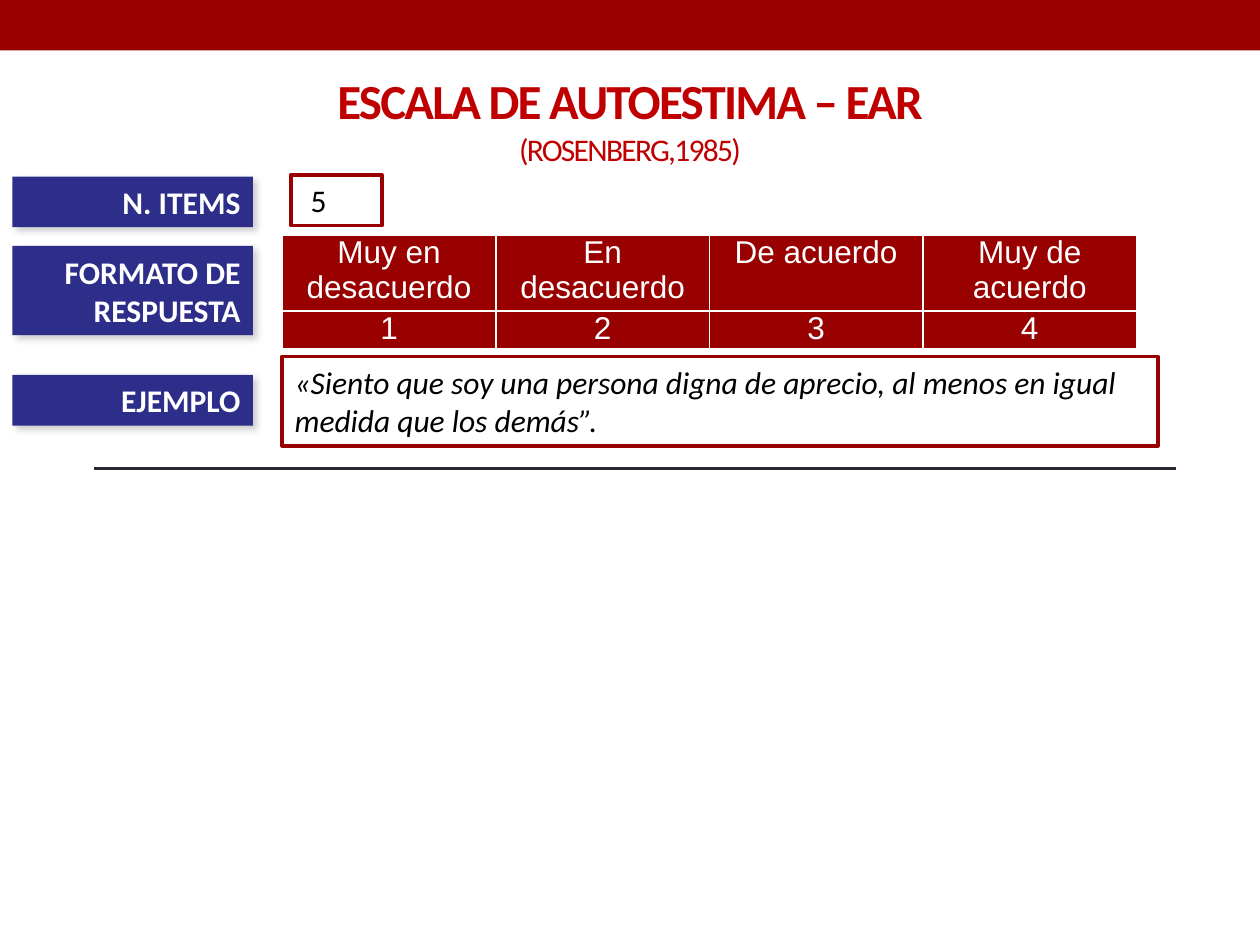
from dataclasses import dataclass

from lxml.etree import SubElement
from pptx import Presentation
from pptx.dml.color import RGBColor
from pptx.enum.shapes import MSO_CONNECTOR, MSO_SHAPE
from pptx.enum.text import MSO_ANCHOR, PP_ALIGN
from pptx.oxml.ns import qn
from pptx.util import Cm, Pt


@dataclass(frozen=True)
class Theme:
    red: RGBColor = RGBColor(0x99, 0x00, 0x00)
    title: RGBColor = RGBColor(0xC0, 0x00, 0x00)
    blue: RGBColor = RGBColor(0x2D, 0x2D, 0x8A)
    rule: RGBColor = RGBColor(0x25, 0x27, 0x31)
    white: RGBColor = RGBColor(0xFF, 0xFF, 0xFF)
    black: RGBColor = RGBColor(0x00, 0x00, 0x00)
    heading: Pt = Pt(28)
    body: Pt = Pt(18)
    face: str = "Calibri"
    table_face: str = "Arial"


theme = Theme()


def add_box(page, left, top, width, height, fill, line=None):
    box = page.shapes.add_shape(MSO_SHAPE.RECTANGLE, Cm(left), Cm(top), Cm(width), Cm(height))
    box.shadow.inherit = False
    box.fill.solid()
    box.fill.fore_color.rgb = fill
    if line is None:
        box.line.fill.background()
    else:
        box.line.color.rgb = line
        box.line.width = Pt(2.08)
    return box


def write(frame, text, color, face, align=PP_ALIGN.LEFT):
    frame.word_wrap = True
    para = frame.paragraphs[0]
    para.text = text
    para.alignment = align
    para.font.name = face
    para.font.size = theme.body
    para.font.color.rgb = color
    return para


deck = Presentation()
deck.slide_width, deck.slide_height = Cm(25.4), Cm(19.05)
page = deck.slides.add_slide(deck.slide_layouts[6])

add_box(page, 0, 0, 25.4, 1.02, theme.red)

rule = page.shapes.add_connector(MSO_CONNECTOR.STRAIGHT, Cm(1.9), Cm(9.45), Cm(23.7), Cm(9.45))
rule.line.color.rgb = theme.rule
rule.line.width = Pt(1.5)
SubElement(rule.element.spPr, qn("a:effectLst"))

title = page.shapes.add_textbox(Cm(0), Cm(0.58), Cm(25.4), Cm(2.92)).text_frame
title.word_wrap = True
title.vertical_anchor = MSO_ANCHOR.BOTTOM
para = title.paragraphs[0]
para.alignment = PP_ALIGN.CENTER
para.font.name = theme.face
para.font.color.rgb = theme.title
name = para.add_run()
name.text = "ESCALA DE AUTOESTIMA – EAR"
name.font.size = theme.heading
name.font.bold = True
para.add_line_break()
author = para.add_run()
author.text = "(ROSENBERG,1985)"
author.font.size = theme.body
for span in (name, author):
    span.font.color.rgb = theme.title
    span.font.name = theme.face
    span.font._element.set("spc", "-100")

answers = [
    (5.87, 3.53, 1.83, 1.02, " 5", False),
    (5.69, 7.19, 17.65, 1.8, "«Siento que soy una persona digna de aprecio, al menos en igual "
     "medida que los demás”.", True),
]
for left, top, width, height, text, italic in answers:
    box = add_box(page, left, top, width, height, theme.white, theme.red)
    para = write(box.text_frame, text, theme.black, theme.face)
    para.font.italic = italic

labels = [
    (3.56, 1.02, "N. ITEMS"),
    (4.96, 1.8, "FORMATO DE RESPUESTA"),
    (7.56, 1.02, "EJEMPLO"),
]
for top, height, text in labels:
    box = add_box(page, 0.25, top, 4.85, height, theme.blue)
    para = write(box.text_frame, text, theme.white, theme.face, PP_ALIGN.RIGHT)
    para.font.bold = True
    effects = box.element.spPr.find(qn("a:effectLst"))
    shadow = SubElement(effects, qn("a:outerShdw"), blurRad=str(Pt(4)), dist=str(Pt(3)),
                        dir="2700000", algn="tl", rotWithShape="0")
    tint = SubElement(shadow, qn("a:srgbClr"), val="808080")
    SubElement(tint, qn("a:alpha"), val="40000")

scale = [
    ("Muy en desacuerdo", "En desacuerdo", "De acuerdo", "Muy de acuerdo"),
    ("1", "2", "3", "4"),
]
table = page.shapes.add_table(2, 4, Cm(5.69), Cm(4.74), Cm(17.22), Cm(2.28)).table
for row, height in zip(table.rows, (1.52, 0.76)):
    row.height = Cm(height)
for r, texts in enumerate(scale):
    for c, text in enumerate(texts):
        cell = table.cell(r, c)
        cell.margin_left = cell.margin_right = Cm(0.13)
        cell.margin_top = cell.margin_bottom = 0
        write(cell.text_frame, text, theme.white, theme.table_face, PP_ALIGN.CENTER)
        properties = cell._tc.get_or_add_tcPr()
        for side in ("a:lnL", "a:lnR", "a:lnT", "a:lnB"):
            border = SubElement(properties, qn(side), w=str(Pt(1)))
            paint = SubElement(border, qn("a:solidFill"))
            SubElement(paint, qn("a:srgbClr"), val=str(theme.white))
        cell.fill.solid()
        cell.fill.fore_color.rgb = theme.red

deck.save("out.pptx")
